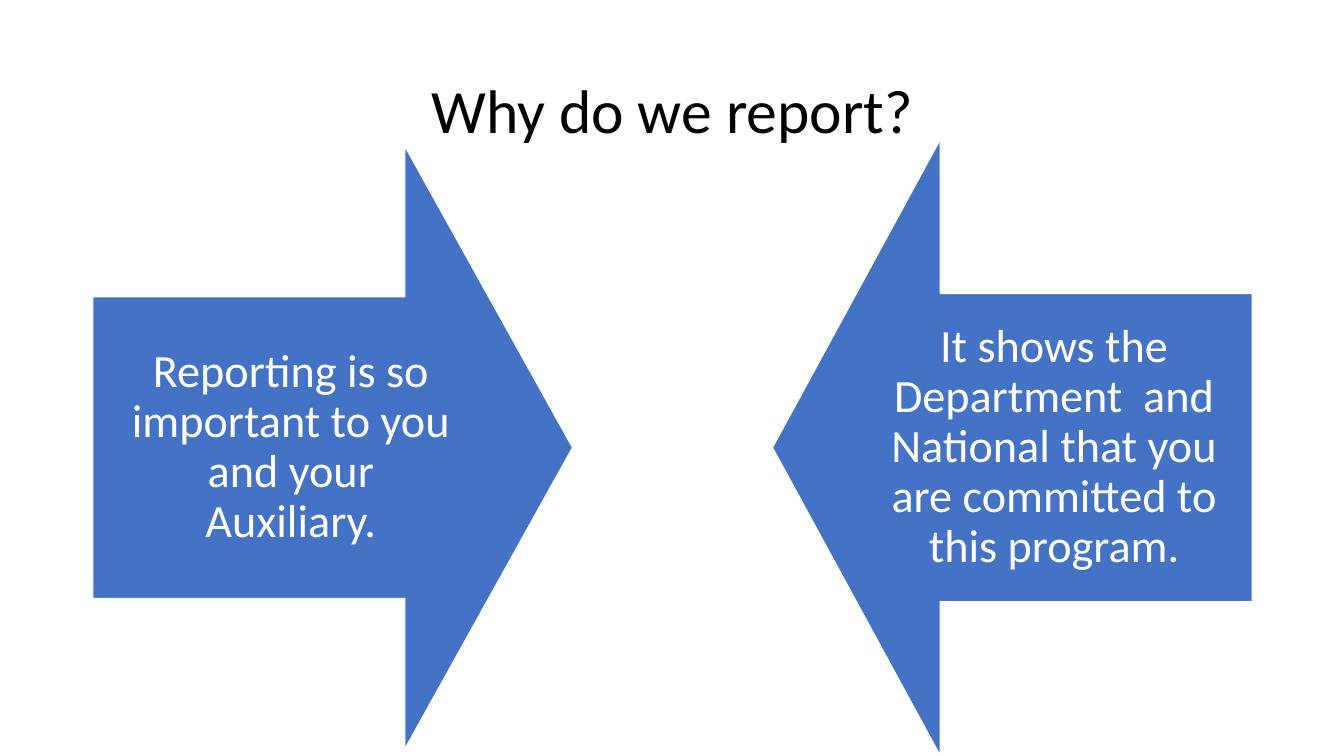
import pptx
import pptx.util
import pptx.dml.color
import pptx.enum.shapes
import pptx.enum.text

TITLE = "Why do we report?"
ARROWS = [
    {"text": "Reporting is so important to you and your Auxiliary.",
     "left": 0.92, "note": 0.92, "span": 5.99, "turn": 270},
    {"text": "It shows the Department  and National that you are committed to this program.",
     "left": 7.66, "note": 8.49, "span": 6.12, "turn": 90},
]
COLORS = {"blue": "4472C4", "white": "FFFFFF", "black": "000000"}
FONT = "Calibri"
LENGTH, MIDDLE, WIDTH = 4.76, 4.44, 3.93

Inches = pptx.util.Inches
Pt = pptx.util.Pt


def color(name):
    return pptx.dml.color.RGBColor.from_string(COLORS[name])


def add_text(slide, text, box, size, ink, pad_x, pad_y):
    shape = slide.shapes.add_textbox(*map(Inches, box))
    frame = shape.text_frame
    frame.word_wrap = True
    frame.vertical_anchor = pptx.enum.text.MSO_ANCHOR.MIDDLE
    frame.margin_left = frame.margin_right = Inches(pad_x)
    frame.margin_top = frame.margin_bottom = Inches(pad_y)
    frame.text = text
    para = frame.paragraphs[0]
    para.alignment = pptx.enum.text.PP_ALIGN.CENTER
    para.line_spacing = 0.9
    font = para.runs[0].font
    font.name = FONT
    font.size = Pt(size)
    font.color.rgb = color(ink)


def add_arrow(slide, item):
    span = item["span"]
    left = item["left"] + (LENGTH - span) / 2
    shape = slide.shapes.add_shape(
        pptx.enum.shapes.MSO_SHAPE.DOWN_ARROW,
        Inches(left), Inches(MIDDLE - LENGTH / 2), Inches(span), Inches(LENGTH))
    shape.rotation = item["turn"]
    shape.adjustments[0] = 0.5
    shape.adjustments[1] = 0.35
    shape.shadow.inherit = False
    shape.fill.solid()
    shape.fill.fore_color.rgb = color("blue")
    shape.line.color.rgb = color("white")
    shape.line.width = Pt(1)
    box = (item["note"], MIDDLE - span / 4, WIDTH, span / 2)
    add_text(slide, item["text"], box, 33, "white", 0.26, 0.26)


def main():
    deck = pptx.Presentation()
    deck.slide_width = Inches(13.33)
    deck.slide_height = Inches(7.5)
    slide = deck.slides.add_slide(deck.slide_layouts[6])
    add_text(slide, TITLE, (0.92, 0.4, 11.5, 1.45), 44, "black", 0.1, 0.05)
    for item in ARROWS:
        add_arrow(slide, item)
    deck.save("out.pptx")


if __name__ == "__main__":
    main()
